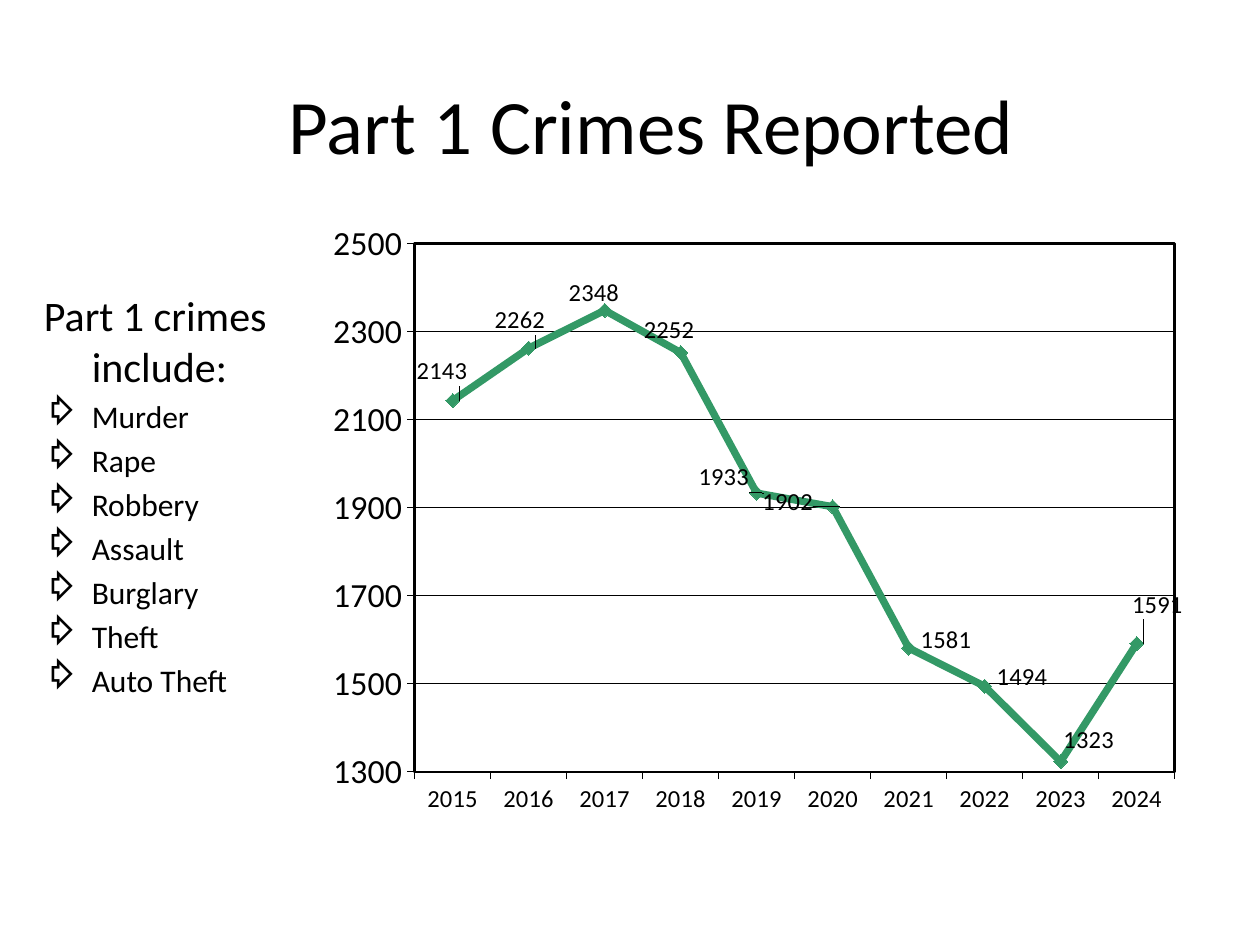
from lxml import etree
from pptx import Presentation
from pptx.chart.data import CategoryChartData
from pptx.dml.color import RGBColor
from pptx.enum.chart import XL_CHART_TYPE, XL_LABEL_POSITION, XL_MARKER_STYLE, XL_TICK_MARK
from pptx.enum.text import MSO_ANCHOR, PP_ALIGN
from pptx.oxml import parse_xml
from pptx.oxml.ns import nsdecls, qn
from pptx.util import Inches, Pt

LINE = XL_CHART_TYPE.LINE_MARKERS
RIGHT = XL_LABEL_POSITION.RIGHT
DIAMOND = XL_MARKER_STYLE.DIAMOND
OUT = XL_TICK_MARK.OUTSIDE
MIDDLE = MSO_ANCHOR.MIDDLE
CENTER = PP_ALIGN.CENTER

COLORS = {"ink": "000000", "trend": "339966"}
CRIMES = ["Murder", "Rape", "Robbery", "Assault", "Burglary", "Theft", "Auto Theft"]
COUNTS = [2143, 2262, 2348, 2252, 1933, 1902, 1581, 1494, 1323, 1591]
YEARS = [str(2015 + i) for i in range(len(COUNTS))]
SHIFTS = [(-0.38, -0.23), (-0.37, -0.22), (-0.38, -0.14), (-0.39, -0.18), (-0.56, -0.13),
          (-0.65, -0.04), (0, -0.06), (0, -0.08), (-0.07, -0.17), (-0.13, -0.31)]
PLOT = {"x": 0.153, "y": 0.078, "w": 0.823, "h": 0.757}


def color(name):
    return RGBColor.from_string(COLORS[name])


def layout(places, inner=False):
    node = parse_xml(f"<c:layout {nsdecls('c')}><c:manualLayout/></c:layout>")
    rules = {"layoutTarget": "inner", "xMode": "edge", "yMode": "edge"} if inner else {}
    for tag, val in {**rules, **places}.items():
        etree.SubElement(node[0], qn(f"c:{tag}")).set("val", str(val))
    return node


class Page:
    def __init__(self, deck, font="Calibri"):
        self.slide = deck.slides.add_slide(deck.slide_layouts[5])
        self.face = font

    def style(self, font, size):
        font.name = self.face
        font.size = Pt(size)
        font.color.rgb = color("ink")

    def stroke(self, line, width, name="ink"):
        line.color.rgb = color(name)
        line.width = Pt(width)

    def place(self, shape, box):
        shape.left, shape.top, shape.width, shape.height = map(Inches, box)

    def title(self, text, box):
        shape = self.slide.shapes.title
        self.place(shape, box)
        frame = shape.text_frame
        frame.text = text
        frame.vertical_anchor = MIDDLE
        para = frame.paragraphs[0]
        para.alignment = CENTER
        self.style(para.runs[0].font, 44)

    def bullets(self, head, items, box):
        frame = self.slide.shapes.add_textbox(*map(Inches, box)).text_frame
        frame.word_wrap = True
        frame.text = "\n".join([head, *items])
        for i, para in enumerate(frame.paragraphs):
            size = 18 if i else 24
            para.space_before = Pt(size * 0.2)
            self.style(para.runs[0].font, size)
            props = para._p.get_or_add_pPr()
            props.set("marL", str(Inches(0.38)))
            props.set("indent", str(Inches(-0.38)))
            if i:
                etree.SubElement(props, qn("a:buChar")).set("char", "⇨")

    def chart(self, box):
        data = CategoryChartData()
        data.categories = YEARS
        data.add_series("Series 1", COUNTS)
        chart = self.slide.shapes.add_chart(LINE, *map(Inches, box), data).chart
        chart.has_legend = False
        chart.has_title = False
        self.style(chart.font, 19.3)
        self.axes(chart)
        self.trend(chart.plots[0], box)
        area = chart._chartSpace.chart.plotArea
        for old in area.findall(qn("c:layout")):
            area.remove(old)
        area.insert(0, layout(PLOT, True))
        area.append(parse_xml(
            f"<c:spPr {nsdecls('c', 'a')}><a:noFill/><a:ln w='{Pt(1.5)}'><a:solidFill>"
            f"<a:srgbClr val='{COLORS['ink']}'/></a:solidFill></a:ln></c:spPr>"))

    def axes(self, chart):
        for axis, size in ((chart.category_axis, 14), (chart.value_axis, 19.3)):
            axis.major_tick_mark = OUT
            self.stroke(axis.format.line, 0.35)
            self.style(axis.tick_labels.font, size)
        axis.minimum_scale, axis.maximum_scale, axis.major_unit = 1300, 2500, 200
        axis.has_major_gridlines = True
        self.stroke(axis.major_gridlines.format.line, 0.35)

    def trend(self, plot, box):
        plot.vary_by_categories = False
        series = plot.series[0]
        series.smooth = False
        self.stroke(series.format.line, 4.2, "trend")
        mark = series.marker
        mark.style, mark.size = DIAMOND, 8
        mark.format.fill.solid()
        mark.format.fill.fore_color.rgb = color("trend")
        self.stroke(mark.format.line, 0.75, "trend")
        for i in range(len(COUNTS)):
            label = series.points[i].data_label
            self.style(label.font, 14)
            label.position = RIGHT
        nodes = series._element.iter(qn("c:dLbl"))
        for node, (x, y) in zip(nodes, SHIFTS):
            spot = {"x": round(x / box[2], 3), "y": round(y / box[3], 3)}
            node.insert(1, layout(spot))


def main():
    deck = Presentation()
    deck.slide_width, deck.slide_height = Inches(10), Inches(7.5)
    page = Page(deck)
    page.title("Part 1 Crimes Reported", (0.92, 0.38, 8.5, 1.21))
    page.bullets("Part 1 crimes include:", CRIMES, (0.25, 2.25, 2.08, 3.45))
    page.chart((2.17, 1.5, 7.33, 5.54))
    deck.save("out.pptx")


if __name__ == "__main__":
    main()
